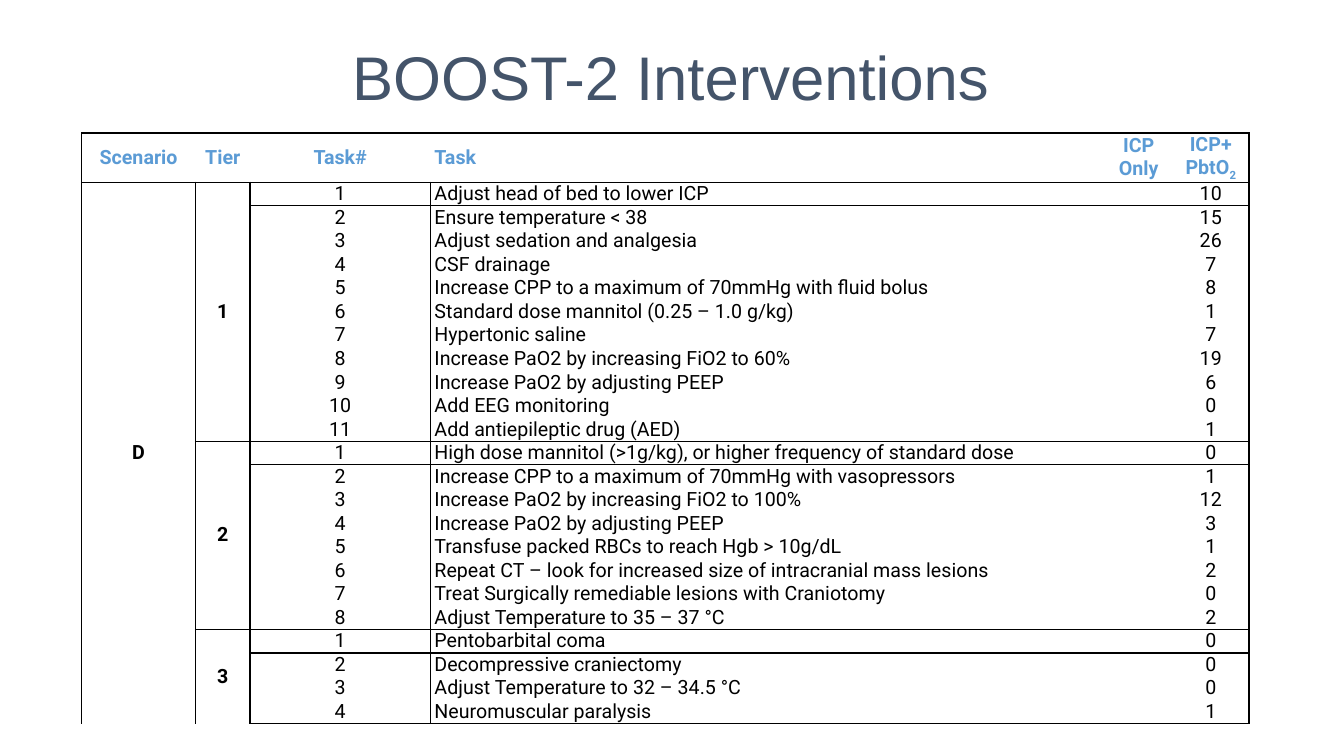
from dataclasses import dataclass
from lxml import etree
from pptx import Presentation
from pptx.dml.color import RGBColor
from pptx.enum.text import MSO_ANCHOR, PP_ALIGN
from pptx.oxml.ns import qn
from pptx.util import Inches, Pt

MIDDLE = MSO_ANCHOR.MIDDLE
LEFT, CENTER = PP_ALIGN.LEFT, PP_ALIGN.CENTER
NO_STYLE_ID = "{2D5ABB26-0587-4C30-8999-92F81FD0307C}"

HEADERS = ["Scenario", "Tier", "Task#", "Task", "ICP\nOnly", "ICP+ PbtO"]
COL_WIDTHS = [1.13, 0.54, 1.79, 6.69, 0.67, 0.76]
TASK_COL = 3
SCENARIO = "D"
TIERS = [
    [
        ("Adjust head of bed to lower ICP", 10),
        ("Ensure temperature < 38", 15),
        ("Adjust sedation and analgesia", 26),
        ("CSF drainage", 7),
        ("Increase CPP to a maximum of 70mmHg with fluid bolus", 8),
        ("Standard dose mannitol (0.25 – 1.0 g/kg)", 1),
        ("Hypertonic saline", 7),
        ("Increase PaO2 by increasing FiO2 to 60%", 19),
        ("Increase PaO2 by adjusting PEEP", 6),
        ("Add EEG monitoring", 0),
        ("Add antiepileptic drug (AED)", 1),
    ],
    [
        ("High dose mannitol (>1g/kg), or higher frequency of standard dose", 0),
        ("Increase CPP to a maximum of 70mmHg with vasopressors", 1),
        ("Increase PaO2 by increasing FiO2 to 100%", 12),
        ("Increase PaO2 by adjusting PEEP", 3),
        ("Transfuse packed RBCs to reach Hgb > 10g/dL", 1),
        ("Repeat CT – look for increased size of intracranial mass lesions", 2),
        ("Treat Surgically remediable lesions with Craniotomy", 0),
        ("Adjust Temperature to 35 – 37 °C", 2),
    ],
    [
        ("Pentobarbital coma", 0),
        ("Decompressive craniectomy", 0),
        ("Adjust Temperature to 32 – 34.5 °C", 0),
        ("Neuromuscular paralysis", 1),
    ],
]


@dataclass(frozen=True)
class Theme:
    title_font: str = "Arial"
    table_font: str = "Roboto"
    title_size: int = 44
    table_size: int = 14
    empty_size: int = 10
    title_color: str = "44546A"
    header_color: str = "5B9BD5"
    text_color: str = "000000"
    border_color: str = "000000"


class SlideBuilder:
    def __init__(self, slide, theme):
        self.slide = slide
        self.theme = theme

    def set_font(self, p, name, size, color, bold=False):
        p.font.name = name
        p.font.size = Pt(size)
        p.font.bold = bold
        p.font.color.rgb = RGBColor.from_string(color)

    def title(self, text, left, top, width, height):
        tb = self.slide.shapes.add_textbox(Inches(left), Inches(top), Inches(width), Inches(height))
        tf = tb.text_frame
        tf.word_wrap = True
        tf.margin_top = Inches(0.12)
        p = tf.paragraphs[0]
        p.text = text
        p.alignment = CENTER
        self.set_font(p, self.theme.title_font, self.theme.title_size, self.theme.title_color)

    def table(self, left, top, col_widths, row_heights):
        table = self.slide.shapes.add_table(
            len(row_heights), len(col_widths), Inches(left), Inches(top),
            Inches(sum(col_widths)), Inches(sum(row_heights))).table
        table.first_row = table.horz_banding = False
        table._tbl.tblPr.find(qn("a:tableStyleId")).text = NO_STYLE_ID
        for col, width in zip(table.columns, col_widths):
            col.width = Inches(width)
        for row, height in zip(table.rows, row_heights):
            row.height = Inches(height)
        return table

    def cell_frame(self, cell, sides):
        cell.margin_left = cell.margin_right = Inches(0.04)
        cell.margin_top = cell.margin_bottom = 0
        cell.vertical_anchor = MIDDLE
        tc_pr = cell._tc.get_or_add_tcPr()
        for side in sides:
            ln = etree.SubElement(tc_pr, qn(f"a:ln{side}"), w=str(Pt(1)))
            fill = etree.SubElement(ln, qn("a:solidFill"))
            etree.SubElement(fill, qn("a:srgbClr"), val=self.theme.border_color)
        cell.fill.background()
        p = cell.text_frame.paragraphs[0]
        etree.SubElement(p._p, qn("a:endParaRPr"), sz=str(self.theme.empty_size * 100))

    def cell_text(self, cell, text, color, bold=False, align=CENTER):
        p = cell.text_frame.paragraphs[0]
        p.text = str(text)
        p.alignment = align
        self.set_font(p, self.theme.table_font, self.theme.table_size, color, bold)
        return p

    def subscript(self, p, text):
        r = p.add_run()
        r.text = text
        r._r.get_or_add_rPr().set("baseline", "-25000")


def border_sides(row, col, n_rows, n_cols, tier_starts):
    def line_above(r):
        return r in (0, 1, n_rows) or (col > 0 and r in tier_starts)

    def line_before(c):
        return c in (0, n_cols) or (row > 0 and c in (1, 2))

    drawn = {"L": line_before(col), "R": line_before(col + 1),
             "T": line_above(row), "B": line_above(row + 1)}
    return [side for side, on in drawn.items() if on]


def fill_interventions(builder):
    theme = builder.theme
    n_tasks = sum(len(tier) for tier in TIERS)
    n_rows, n_cols = n_tasks + 1, len(HEADERS)
    tier_starts = [1 + sum(len(t) for t in TIERS[:i]) for i in range(len(TIERS))]
    header_height, table_height = 0.46, 5.83
    task_height = (table_height - header_height) / n_tasks
    table = builder.table(0.81, 1.32, COL_WIDTHS, [header_height] + [task_height] * n_tasks)

    for row in range(n_rows):
        for col in range(n_cols):
            builder.cell_frame(table.cell(row, col),
                               border_sides(row, col, n_rows, n_cols, tier_starts))

    for col, header in enumerate(HEADERS):
        p = builder.cell_text(table.cell(0, col), header, theme.header_color, True,
                              LEFT if col == TASK_COL else CENTER)
    builder.subscript(p, "2")

    table.cell(1, 0).merge(table.cell(n_tasks, 0))
    builder.cell_text(table.cell(1, 0), SCENARIO, theme.text_color, True)
    for tier_no, (start, tasks) in enumerate(zip(tier_starts, TIERS), 1):
        table.cell(start, 1).merge(table.cell(start + len(tasks) - 1, 1))
        builder.cell_text(table.cell(start, 1), tier_no, theme.text_color, True)
        for i, (task, count) in enumerate(tasks):
            row = start + i
            builder.cell_text(table.cell(row, 2), i + 1, theme.text_color)
            builder.cell_text(table.cell(row, TASK_COL), task, theme.text_color, align=LEFT)
            builder.cell_text(table.cell(row, 5), count, theme.text_color)


def main():
    prs = Presentation()
    prs.slide_width, prs.slide_height = Inches(13.33), Inches(7.5)
    builder = SlideBuilder(prs.slides.add_slide(prs.slide_layouts[6]), Theme())
    fill_interventions(builder)
    builder.title("BOOST-2 Interventions", 2.28, 0.27, 8.75, 1.25)
    prs.save("out.pptx")


if __name__ == "__main__":
    main()
